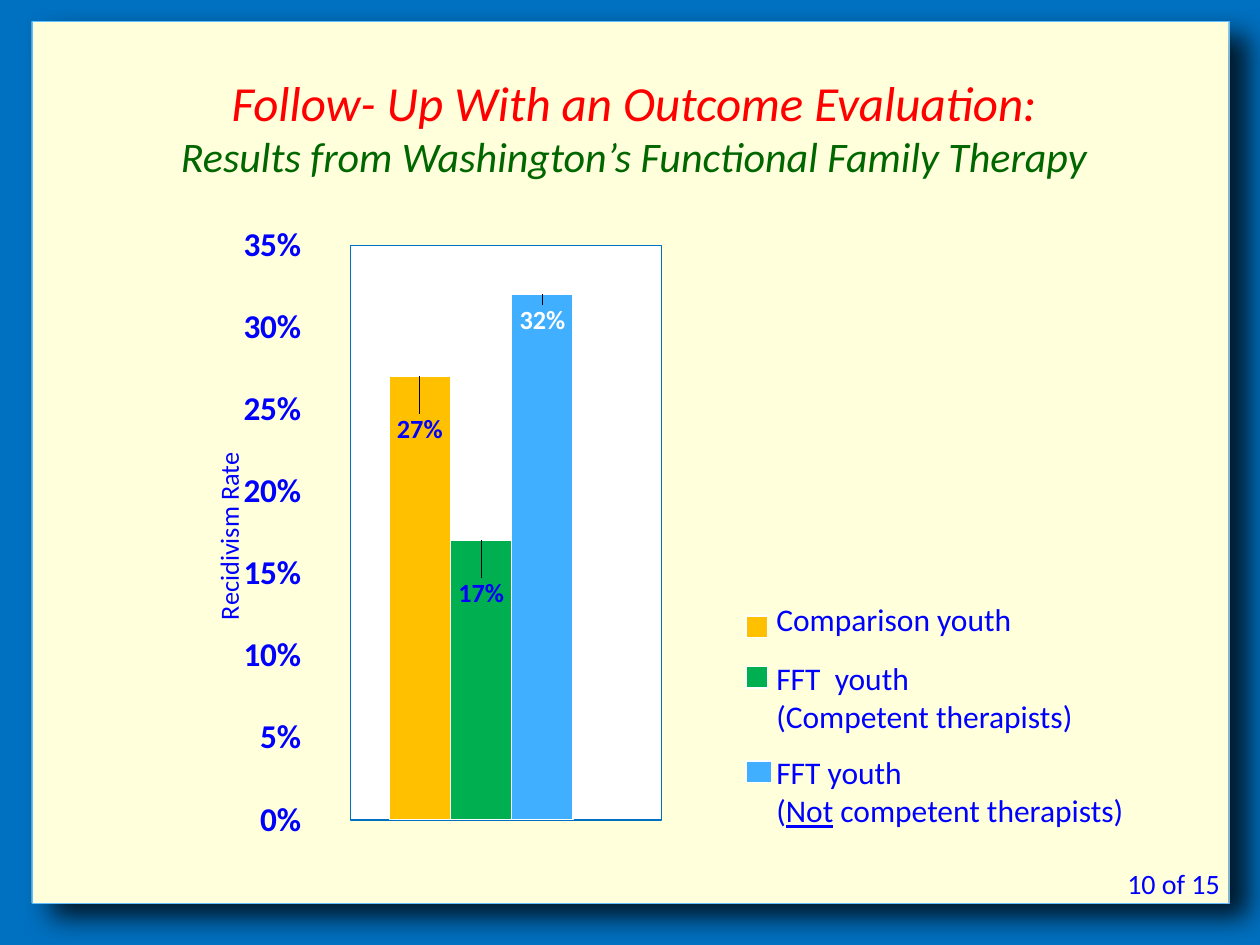
from lxml import etree
from pptx import Presentation, util as u
from pptx.chart import data
from pptx.dml import color
from pptx.enum import chart as ch, shapes, text
from pptx.oxml import ns

HUES = {
    "back": "0070C0", "card": "FFFFDC", "edge": "60BDFF", "white": "FFFFFF",
    "gold": "FFC000", "green": "00B050", "sky": "40AFFF",
    "ink": "0000FF", "red": "FF0000", "moss": "006600", "black": "000000",
}
FONT = "Calibri"
PLOT = (7.06, 4.95, 5.28, 11.58)
AREA = (3.56, 4.06, 10.16, 13.2)
BARS = [
    ("Comparison youth", 0.27, "gold", "ink", 0.64),
    ("FFT youth (Competent therapists)", 0.17, "green", "ink", 0.64),
    ("FFT youth (Not competent therapists)", 0.32, "sky", "white", 0.1),
]
KEYS = [
    ("gold", 12.42, 0.43, 12.09, [["Comparison youth"]]),
    ("green", 13.44, 0.43, 13.28, [["FFT  youth"], ["(Competent therapists)"]]),
    ("sky", 15.34, 0.51, 15.19,
     [["FFT youth"], ["(", "Not", " competent therapists)"]]),
]


def hue(name):
    return color.RGBColor.from_string(HUES[name])


def paint(form, fill, line, width):
    form.fill.solid()
    form.fill.fore_color.rgb = hue(fill)
    form.line.color.rgb = hue(line)
    form.line.width = u.Pt(width)


def style(font, size, ink="ink", bold=False, slant=False):
    font.name = FONT
    font.size = u.Pt(size)
    font.bold = bold
    font.italic = slant
    font.color.rgb = hue(ink)


def add_box(slide, place, fill, line, width=0.75):
    box = slide.shapes.add_shape(shapes.MSO_SHAPE.RECTANGLE, *map(u.Cm, place))
    box.shadow.inherit = False
    paint(box, fill, line, width)
    return box


def add_text(slide, place, pad=0):
    frame = slide.shapes.add_textbox(*map(u.Cm, place)).text_frame
    frame.word_wrap = True
    frame.margin_left = frame.margin_right = u.Cm(pad)
    frame.margin_top = frame.margin_bottom = u.Cm(pad / 2)
    return frame


def add_line(frame, first, align=text.PP_ALIGN.LEFT):
    para = frame.paragraphs[0] if first else frame.add_paragraph()
    para.alignment = align
    return para


def add_run(para, words, size, **look):
    run = para.add_run()
    run.text = words
    style(run.font, size, **look)
    return run


def add_card(slide):
    card = add_box(slide, (0.64, 0.43, 24.13, 17.78), "card", "edge", 0.05)
    effects = card._element.spPr.find(ns.qn("a:effectLst"))
    shade = etree.SubElement(
        effects, ns.qn("a:outerShdw"), blurRad=str(u.Pt(15)),
        dist=str(u.Pt(14)), dir=str(36 * 60000), algn="tl", rotWithShape="0")
    tint = etree.SubElement(shade, ns.qn("a:srgbClr"), val=HUES["black"])
    etree.SubElement(tint, ns.qn("a:alpha"), val="79000")


def add_title(slide):
    frame = add_text(slide, (1.07, 1.07, 23.42, 2.97), 0.25)
    frame.vertical_anchor = text.MSO_ANCHOR.MIDDLE
    lines = [
        ("Follow- Up With an Outcome Evaluation:", 28, "red"),
        ("Results from Washington’s Functional Family Therapy", 24, "moss"),
    ]
    for num, (words, size, ink) in enumerate(lines):
        para = add_line(frame, num == 0, text.PP_ALIGN.CENTER)
        add_run(para, words, size, ink=ink, slant=True)


def make_layout(**parts):
    layout = etree.Element(ns.qn("c:layout"))
    manual = etree.SubElement(layout, ns.qn("c:manualLayout"))
    for tag, val in parts.items():
        etree.SubElement(manual, ns.qn("c:" + tag), val=str(val))
    return layout


def set_layout(node, spot, **parts):
    for old in node.findall(ns.qn("c:layout")):
        node.remove(old)
    node.insert(spot, make_layout(**parts))


def portion(left, top):
    return {"x": round((left - AREA[0]) / AREA[2], 4),
            "y": round((top - AREA[1]) / AREA[3], 4)}


def set_axes(chart):
    chart.category_axis.visible = False
    axis = chart.value_axis
    axis.minimum_scale, axis.maximum_scale, axis.major_unit = 0, 0.35, 0.05
    axis.has_major_gridlines = False
    axis.major_tick_mark = ch.XL_TICK_MARK.NONE
    axis.format.line.fill.background()
    labels = axis.tick_labels
    labels.number_format = "0%_W_W"
    labels.number_format_is_linked = False
    style(labels.font, 19, bold=True)
    title = axis.axis_title
    add_run(title.text_frame.paragraphs[0], "Recidivism Rate", 15)
    body = title.text_frame._txBody.find(ns.qn("a:bodyPr"))
    body.set("rot", "-5400000")
    body.set("vert", "horz")
    set_layout(title._element, 1, xMode="edge", yMode="edge",
               **portion(4.15, 9.02))


def add_bars(slide):
    feed = data.CategoryChartData(number_format="0%")
    feed.categories = ["Recidivism Rate"]
    for name, rate, *_ in BARS:
        feed.add_series(name, [rate])
    chart = slide.shapes.add_chart(
        ch.XL_CHART_TYPE.COLUMN_CLUSTERED, *map(u.Cm, AREA), feed).chart
    chart.has_legend = False
    chart.has_title = False
    style(chart.font, 15)
    plot = chart.plots[0]
    plot.vary_by_categories = False
    plot.gap_width = 127
    plot.overlap = 0
    for series, (_, _, fill, ink, drop) in zip(plot.series, BARS):
        paint(series.format, fill, "white", 0.75)
        label = series.points[0].data_label
        style(label.font, 15, ink=ink, bold=True)
        label.position = ch.XL_LABEL_POSITION.INSIDE_END
        node = series._element.find(".//" + ns.qn("c:dLbl"))
        set_layout(node, 1, x=0, y=round(drop / AREA[3], 4))
    set_axes(chart)
    area = chart._chartSpace.find(".//" + ns.qn("c:plotArea"))
    set_layout(area, 0, layoutTarget="inner", xMode="edge", yMode="edge",
               **portion(*PLOT[:2]), w=round(PLOT[2] / AREA[2], 4),
               h=round(PLOT[3] / AREA[3], 4))


def add_key(slide, fill, top, width, line, rows):
    add_box(slide, (15.04, top, width, 0.43), fill, "white")
    frame = add_text(slide, (15.65, line, 8.97, 0.77 * len(rows)))
    for num, row in enumerate(rows):
        para = add_line(frame, num == 0)
        for words in row:
            run = add_run(para, words, 18)
            run.font.underline = words == "Not"


def main():
    deck = Presentation()
    deck.slide_width, deck.slide_height = u.Cm(25.4), u.Cm(19.05)
    slide = deck.slides.add_slide(deck.slide_layouts[6])
    slide.background.fill.solid()
    slide.background.fill.fore_color.rgb = hue("back")
    add_card(slide)
    add_title(slide)
    add_box(slide, (*PLOT[:2], 6.27, PLOT[3]), "white", "back")
    add_bars(slide)
    for key in KEYS:
        add_key(slide, *key)
    frame = add_text(slide, (21.39, 17.35, 3.45, 0.94), 0.25)
    add_run(add_line(frame, True, text.PP_ALIGN.RIGHT), "10 of 15", 16)
    deck.save("out.pptx")


if __name__ == "__main__":
    main()
